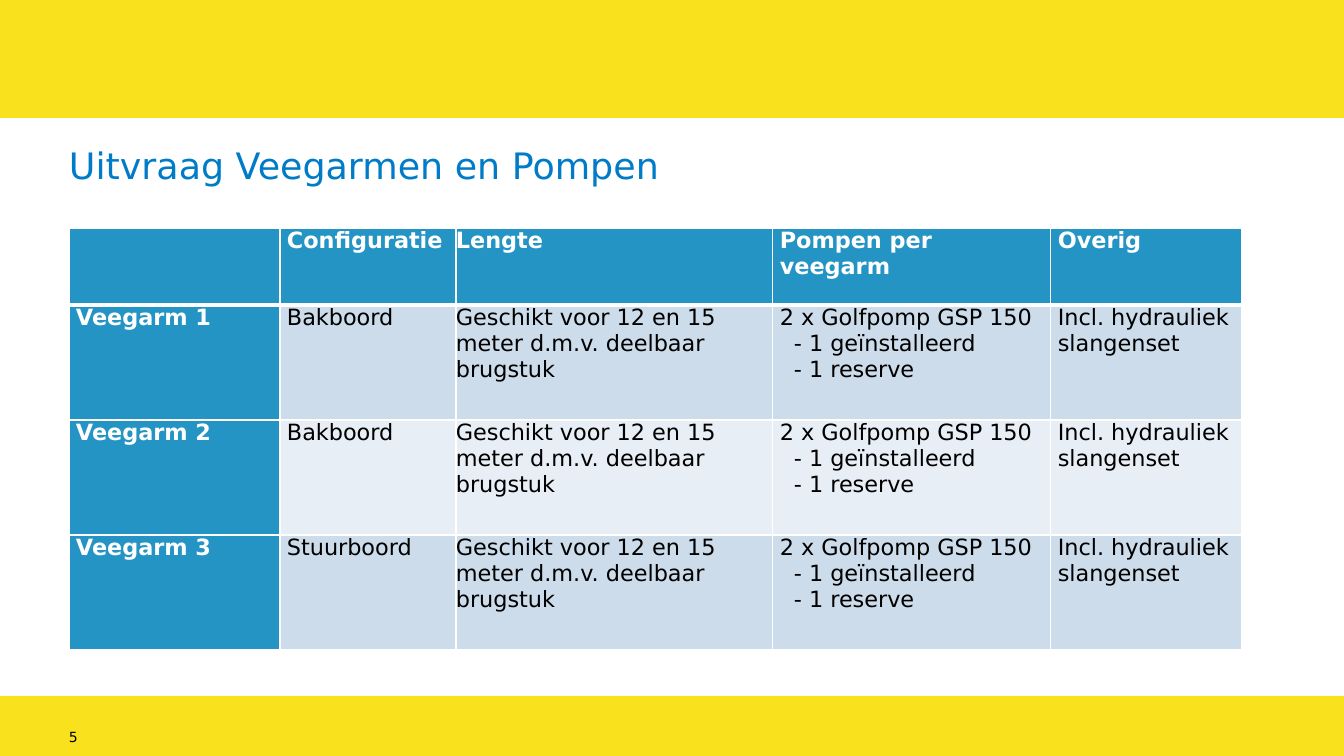
from lxml.etree import SubElement
from pptx import Presentation
from pptx.dml.color import RGBColor
from pptx.enum.shapes import MSO_SHAPE as Shape
from pptx.enum.text import MSO_ANCHOR as Anchor
from pptx.oxml.ns import qn
from pptx.util import Pt

PX = 914400 / 100.8
WHITE = RGBColor(0xFF, 0xFF, 0xFF)
BLACK = RGBColor(0x00, 0x00, 0x00)
YELLOW = RGBColor(0xF9, 0xE1, 0x1E)
TITLE_BLUE = RGBColor(0x00, 0x7B, 0xC7)
HEADER_BLUE = RGBColor(0x24, 0x94, 0xC5)
BAND_DARK = RGBColor(0xCD, 0xDC, 0xEA)
BAND_LIGHT = RGBColor(0xE8, 0xEE, 0xF5)

COLUMN_WIDTHS = [211, 176, 317, 278, 191]
ROW_HEIGHTS = [77, 115, 115, 115]
LENGTH_COLUMN = 2
LENGTH = "Geschikt voor 12 en 15 meter d.m.v. deelbaar brugstuk"
PUMPS = "2 x Golfpomp GSP 150\n- 1 geïnstalleerd\n- 1 reserve"
OTHER = "Incl. hydrauliek slangenset"
HEADINGS = ["", "Configuratie", "Lengte", "Pompen per veegarm", "Overig"]
SIDES = ["Bakboord", "Bakboord", "Stuurboord"]
ROWS = [HEADINGS] + [
    [f"Veegarm {number}", side, LENGTH, PUMPS, OTHER]
    for number, side in enumerate(SIDES, 1)
]


def px(length):
    return round(length * PX)


class SlideBuilder:
    font_name = "DejaVu Sans"

    def __init__(self, slide):
        self.slide = slide

    def bar(self, left, top, width, height, color):
        shape = self.slide.shapes.add_shape(
            Shape.RECTANGLE, *map(px, (left, top, width, height)))
        shape.shadow.inherit = False
        shape.fill.solid()
        shape.fill.fore_color.rgb = color
        shape.line.fill.background()

    def paragraphs(self, frame, text, color, size, bold=False):
        for index, line in enumerate(text.split("\n")):
            paragraph = frame.add_paragraph() if index else frame.paragraphs[0]
            if line.startswith("- "):
                properties = paragraph._p.get_or_add_pPr()
                properties.set("marL", str(px(14)))
                properties.set("indent", "0")
            paragraph.text = line
            formats = {"name": self.font_name, "size": Pt(size), "bold": bold}
            for name, value in formats.items():
                setattr(paragraph.font, name, value)
            paragraph.font.color.rgb = color

    def text(self, left, top, width, height, text, color, size, anchor):
        box = self.slide.shapes.add_textbox(
            *map(px, (left, top, width, height)))
        formats = {"margin_left": 0, "margin_top": 0, "margin_right": 0,
                   "margin_bottom": 0, "word_wrap": True,
                   "vertical_anchor": anchor}
        for name, value in formats.items():
            setattr(box.text_frame, name, value)
        self.paragraphs(box.text_frame, text, color, size)

    def borders(self, cell, **widths):
        properties = cell._tc.get_or_add_tcPr()
        for side in "LRTB":
            line = SubElement(properties, qn(f"a:ln{side}"),
                              w=str(Pt(widths.get(side, 1))))
            fill = SubElement(line, qn("a:solidFill"))
            SubElement(fill, qn("a:srgbClr"), val=str(WHITE))

    def cell(self, cell, row, column, text):
        heading = row == 0 or column == 0
        self.borders(cell, T=3 if row == 1 else 1, B=1 if row else 3)
        cell.fill.solid()
        band = BAND_DARK if row % 2 else BAND_LIGHT
        cell.fill.fore_color.rgb = HEADER_BLUE if heading else band
        margin = 0 if column == LENGTH_COLUMN else px(7)
        formats = {"margin_left": margin, "margin_right": margin,
                   "margin_top": 0, "margin_bottom": 0,
                   "vertical_anchor": Anchor.TOP}
        for name, value in formats.items():
            setattr(cell, name, value)
        self.paragraphs(cell.text_frame, text, WHITE if heading else BLACK,
                        16, heading)

    def table(self, left, top, widths, heights, rows):
        table = self.slide.shapes.add_table(
            len(heights), len(widths),
            *map(px, (left, top, sum(widths), sum(heights)))).table
        for column, width in zip(table.columns, widths):
            column.width = px(width)
        for row, height in zip(table.rows, heights):
            row.height = px(height)
        for row, texts in enumerate(rows):
            for column, text in enumerate(texts):
                self.cell(table.cell(row, column), row, column, text)


def main():
    presentation = Presentation()
    presentation.slide_width = px(1344)
    presentation.slide_height = px(756)
    slide = presentation.slides.add_slide(presentation.slide_layouts[6])
    builder = SlideBuilder(slide)
    builder.bar(0, 696, 1344, 60, YELLOW)
    builder.bar(0, 0, 1344, 118, YELLOW)
    builder.text(69, 729, 280, 13, "5", BLACK, 10, Anchor.TOP)
    builder.text(69, 143, 1235, 44, "Uitvraag Veegarmen en Pompen",
                 TITLE_BLUE, 26, Anchor.BOTTOM)
    builder.table(69, 228, COLUMN_WIDTHS, ROW_HEIGHTS, ROWS)
    presentation.save("out.pptx")


if __name__ == "__main__":
    main()
